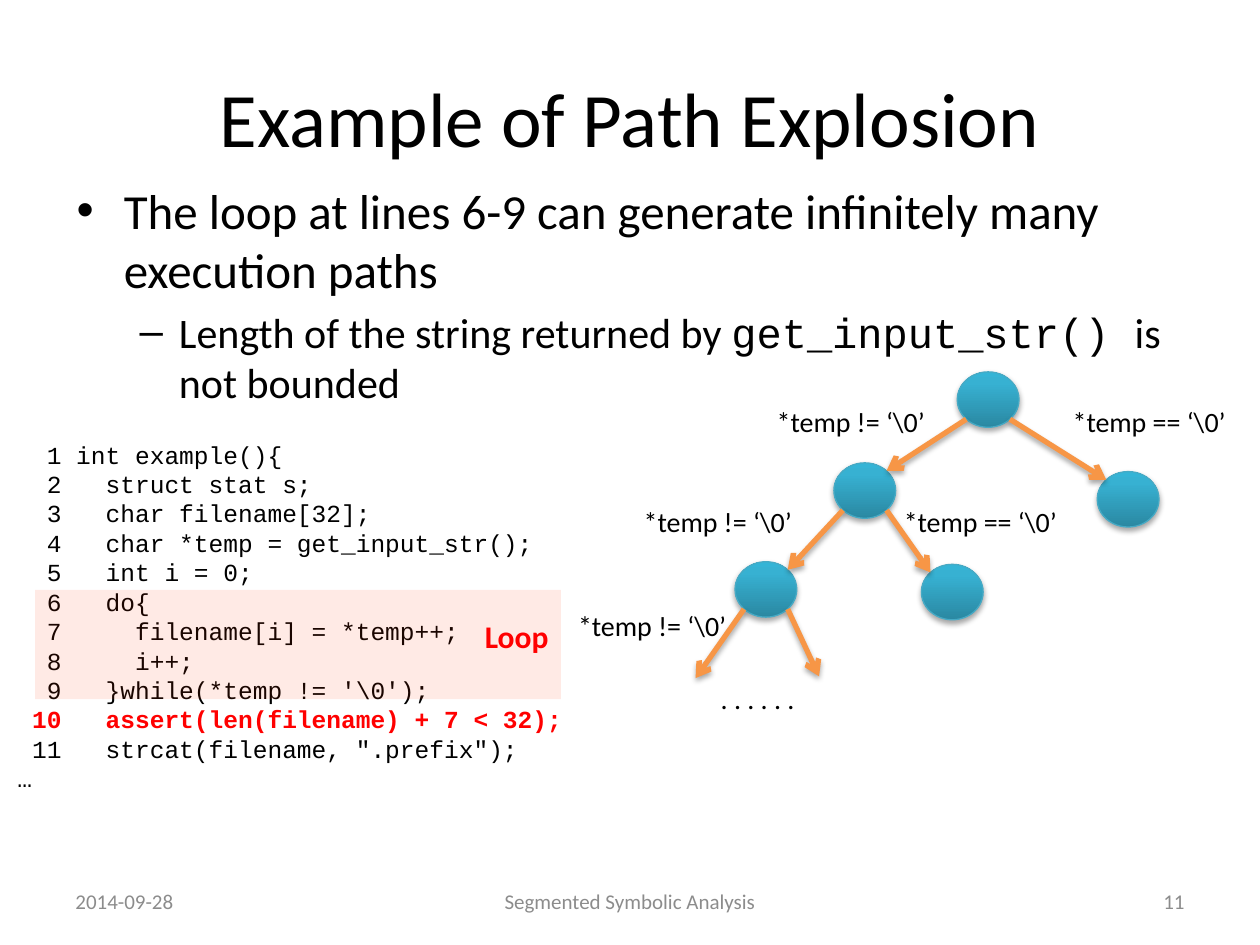
"""Build the path explosion slide: bullets, code listing and execution tree."""
import copy
import math

import lxml.etree
import pptx
import pptx.dml.color
import pptx.enum.dml
import pptx.enum.shapes
import pptx.enum.text
import pptx.oxml
import pptx.oxml.ns
import pptx.util

Pt = pptx.util.Pt
qn = pptx.oxml.ns.qn
ALIGN = pptx.enum.text.PP_ALIGN
ANCHOR = pptx.enum.text.MSO_ANCHOR
SHAPE = pptx.enum.shapes.MSO_SHAPE

THEME = {
    "font": "Calibri", "code_font": "Courier New",
    "ink": "000000", "alert": "FF0000", "muted": "8C8C8C",
    "node_line": "46AAC5", "arrow": "F79646", "loop": "FF3300",
    "node_stops": [(0, "2A88A2"), (0.8, "37B1D2"), (1, "34B4D6")],
    "title": 44, "bullet": 28, "subbullet": 24, "footer": 12,
    "code": 14, "label": 16, "loop_label": 18,
}

TITLE = "Example of Path Explosion"
BULLETS = [
    {"size": "bullet", "mark": "•", "margin": 27, "hang": 27, "runs": [
        ("The loop at lines 6-9 can generate infinitely many execution paths", "font")]},
    {"size": "subbullet", "mark": "–", "margin": 58.5, "hang": 22.5, "runs": [
        ("Length of the string returned by ", "font"),
        ("get_input_str() ", "code_font"),
        ("is not bounded", "font")]},
]
FOOTERS = [
    ("2014-09-28", 36, 168, ALIGN.LEFT),
    ("Segmented Symbolic Analysis", 246, 228, ALIGN.CENTER),
    ("11", 516, 168, ALIGN.RIGHT),
]
CODE = [
    "int example(){",
    "  struct stat s;",
    "  char filename[32];",
    "  char *temp = get_input_str();",
    "  int i = 0;",
    "  do{",
    "    filename[i] = *temp++;",
    "    i++;",
    "  }while(*temp != '\\0');",
    "  assert(len(filename) + 7 < 32);",
    "  strcat(filename, \".prefix\");",
]
ASSERT_LINE = 10
NODE_SIZE = (35.3, 31.7)
NODES = {
    "root": (547, 212.5), "continue": (476.5, 264.5), "stop": (627, 269.5),
    "continue twice": (420, 321), "stop second": (526.5, 322.5),
}
EDGES = [
    ("root", "continue"), ("root", "stop"),
    ("continue", "continue twice"), ("continue", "stop second"),
]
OPEN_EDGES = [("continue twice", -1, (397.5, 387.5)), ("continue twice", 1, (468, 386.5))]
NOT_END, END = "*temp != ‘\\0’", "*temp == ‘\\0’"
LABELS = [
    (NOT_END, 420, 227.5), (END, 590.5, 227.5),
    (NOT_END, 344, 284.5), (END, 494, 284.5),
    (". . . . . . ", 368.5, 386), (NOT_END, 306.5, 344),
]


def rgb(name):
    return pptx.dml.color.RGBColor.from_string(THEME.get(name, name))


def add_run(paragraph, text, size, color="ink", font="font", bold=False):
    run = paragraph.add_run()
    run.text = text
    run.font.size = Pt(THEME[size])
    run.font.name = THEME[font]
    run.font.bold = bold
    run.font.color.rgb = rgb(color)


def add_frame(slide, left, top, width, height, anchor=ANCHOR.TOP):
    frame = slide.shapes.add_textbox(Pt(left), Pt(top), Pt(width), Pt(height)).text_frame
    frame.word_wrap = True
    frame.vertical_anchor = anchor
    return frame


def add_line_of_text(slide, box, text, size, align=ALIGN.LEFT, anchor=ANCHOR.TOP, **style):
    paragraph = add_frame(slide, *box, anchor=anchor).paragraphs[0]
    paragraph.alignment = align
    add_run(paragraph, text, size, **style)


def next_paragraph(frame, index):
    return frame.add_paragraph() if index else frame.paragraphs[0]


def add_shadow(shape):
    properties = shape._element.spPr
    for old in properties.findall(qn("a:effectLst")):
        properties.remove(old)
    properties.append(pptx.oxml.parse_xml(
        f'<a:effectLst {pptx.oxml.ns.nsdecls("a")}>'
        '<a:outerShdw blurRad="40000" dist="23000" dir="5400000" rotWithShape="0">'
        '<a:srgbClr val="000000"><a:alpha val="35000"/></a:srgbClr>'
        '</a:outerShdw></a:effectLst>'))


def add_node(slide, left, top):
    node = slide.shapes.add_shape(SHAPE.OVAL, Pt(left), Pt(top), *map(Pt, NODE_SIZE))
    node.fill.gradient()
    node.fill.gradient_angle = 90
    stop_list = node._element.spPr.find(".//" + qn("a:gsLst"))
    stop_list.append(copy.deepcopy(stop_list[-1]))
    for stop, (position, color) in zip(node.fill.gradient_stops, THEME["node_stops"]):
        stop.position = position
        stop.color.rgb = rgb(color)
    node.line.color.rgb = rgb("node_line")
    node.line.width = Pt(0.75)
    add_shadow(node)


def rim_point(name, across, down):
    return tuple(start + size / 2 * (1 + sign * math.sqrt(0.5))
                 for start, size, sign in zip(NODES[name], NODE_SIZE, (across, down)))


def add_arrow(slide, start, end):
    arrow = slide.shapes.add_connector(
        pptx.enum.shapes.MSO_CONNECTOR.STRAIGHT, *map(Pt, start + end))
    arrow.line.color.rgb = rgb("arrow")
    arrow.line.width = Pt(3)
    lxml.etree.SubElement(arrow.line._get_or_add_ln(), qn("a:tailEnd"), type="arrow")
    add_shadow(arrow)


def add_bullets(slide):
    frame = add_frame(slide, 36.7, 99.4, 648, 356.4)
    for index, bullet in enumerate(BULLETS):
        paragraph = next_paragraph(frame, index)
        paragraph.level = index
        paragraph.space_before = Pt(0.2 * THEME[bullet["size"]])
        properties = paragraph._p.get_or_add_pPr()
        properties.set("marL", str(Pt(bullet["margin"])))
        properties.set("indent", str(-Pt(bullet["hang"])))
        lxml.etree.SubElement(properties, qn("a:buFont"), typeface="Arial")
        lxml.etree.SubElement(properties, qn("a:buChar"), char=bullet["mark"])
        for text, font in bullet["runs"]:
            add_run(paragraph, text, bullet["size"], font=font)


def add_code(slide):
    frame = add_frame(slide, 2.9, 247.7, 345.6, 211)
    lines = [f"{number:3d} {line}" for number, line in enumerate(CODE, 1)] + ["…"]
    for index, line in enumerate(lines):
        alert = index + 1 == ASSERT_LINE
        add_run(next_paragraph(frame, index), line, "code",
                "alert" if alert else "ink", "code_font", alert)


def add_loop_highlight(slide):
    band = slide.shapes.add_shape(SHAPE.RECTANGLE, Pt(20), Pt(337), Pt(300.5), Pt(62.5))
    band.shadow.inherit = False
    band.fill.solid()
    band.fill.fore_color.rgb = rgb("loop")
    color = band._element.spPr.find(".//" + qn("a:srgbClr"))
    lxml.etree.SubElement(color, qn("a:alpha"), val="10000")
    band.line.fill.background()
    add_line_of_text(slide, (270, 349.2, 64.8, 29), "Loop", "loop_label",
                     color="alert", bold=True)


def main():
    presentation = pptx.Presentation()
    presentation.slide_width, presentation.slide_height = Pt(720), Pt(540)
    slide = presentation.slides.add_slide(presentation.slide_layouts[5])
    title = slide.shapes.title
    title.left, title.top, title.width, title.height = map(Pt, (36, 21.6, 648, 90))
    title.text_frame.vertical_anchor = ANCHOR.MIDDLE
    title.text_frame.paragraphs[0].alignment = ALIGN.CENTER
    add_run(title.text_frame.paragraphs[0], TITLE, "title")
    add_bullets(slide)
    for text, left, width, align in FOOTERS:
        add_line_of_text(slide, (left, 500.5, width, 28.75), text, "footer", align,
                         ANCHOR.MIDDLE, color="muted")
    add_code(slide)
    for position in NODES.values():
        add_node(slide, *position)
    for parent, child in EDGES:
        side = 1 if NODES[child][0] > NODES[parent][0] else -1
        add_arrow(slide, rim_point(parent, side, 1), rim_point(child, -side, -1))
    for parent, side, end in OPEN_EDGES:
        add_arrow(slide, rim_point(parent, side, 1), end)
    add_loop_highlight(slide)
    for text, left, top in LABELS:
        add_line_of_text(slide, (left, top, 132.5, 26.6), text, "label", ALIGN.CENTER)
    presentation.save("out.pptx")


if __name__ == "__main__":
    main()
